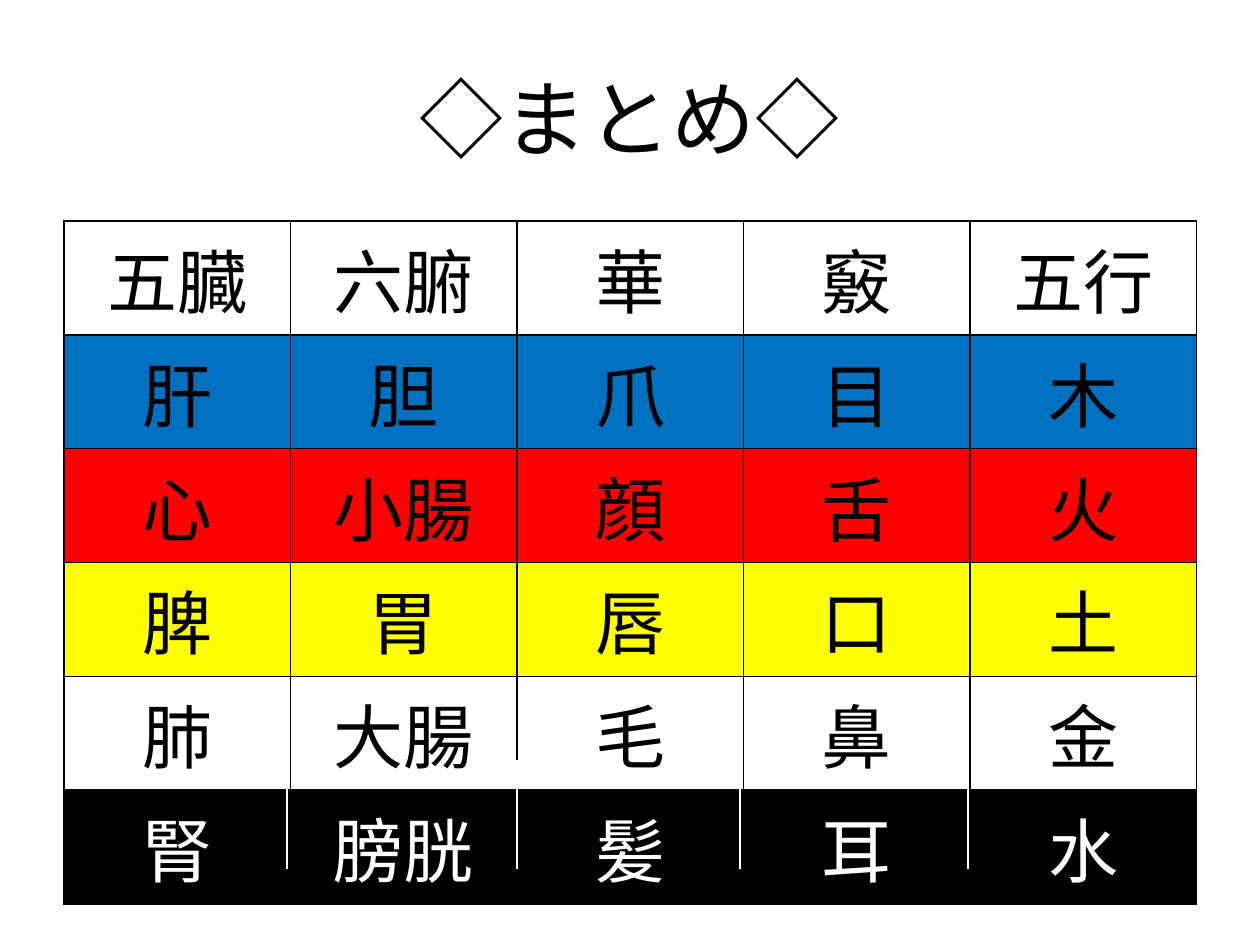
from dataclasses import dataclass

from lxml.etree import SubElement
from pptx import Presentation
from pptx.dml.color import RGBColor
from pptx.enum.text import MSO_ANCHOR, PP_ALIGN
from pptx.oxml.ns import qn
from pptx.util import Pt

EMU_PER_PX = 914400 / 126


def px(length):
    return round(length * EMU_PER_PX)


@dataclass(frozen=True)
class Theme:
    font: str = "Calibri"
    black: str = "000000"
    white: str = "FFFFFF"
    blue: str = "0070C0"
    red: str = "FF0000"
    yellow: str = "FFFF00"
    title_size: int = 48
    cell_size: int = 40
    border_width: float = 1
    divider_width: float = 0.75


class SlideBuilder:
    def __init__(self, presentation, theme):
        self.theme = theme
        self.slide = presentation.slides.add_slide(presentation.slide_layouts[5])

    def format_text(self, frame, text, size, color):
        frame.text = text
        paragraph = frame.paragraphs[0]
        paragraph.alignment = PP_ALIGN.CENTER
        font = paragraph.runs[0].font
        formats = {"name": self.theme.font, "size": Pt(size), "bold": False}
        for attribute, value in formats.items():
            setattr(font, attribute, value)
        font.color.rgb = RGBColor.from_string(color)

    def title(self, text, left, top, width, height):
        heading = self.slide.shapes.title
        place = {"left": left, "top": top, "width": width, "height": height}
        for attribute, value in place.items():
            setattr(heading, attribute, px(value))
        heading.text_frame.vertical_anchor = MSO_ANCHOR.MIDDLE
        self.format_text(heading.text_frame, text, self.theme.title_size, self.theme.black)

    def border(self, cell):
        properties = cell._tc.get_or_add_tcPr()
        for position, side in enumerate(("lnL", "lnR", "lnT", "lnB")):
            line = SubElement(properties, qn(f"a:{side}"), w=str(Pt(self.theme.border_width)))
            properties.insert(position, line)
            fill = SubElement(line, qn("a:solidFill"))
            SubElement(fill, qn("a:srgbClr"), val=self.theme.black)

    def table(self, rows, left, top, width, height):
        columns = len(rows[0][0])
        grid = self.slide.shapes.add_table(
            len(rows), columns, px(left), px(top), px(width), px(height)
        ).table
        for flag in ("first_row", "horz_banding"):
            setattr(grid, flag, False)
        for row_index, (words, fill, color) in enumerate(rows):
            for column_index, word in enumerate(words):
                cell = grid.cell(row_index, column_index)
                self.format_text(cell.text_frame, word, self.theme.cell_size, color)
                if fill:
                    cell.fill.solid()
                    cell.fill.fore_color.rgb = RGBColor.from_string(fill)
                else:
                    cell.fill.background()
                self.border(cell)

    def divider(self, x, top, bottom):
        line = self.slide.shapes.add_connector(1, px(x), px(top), px(x), px(bottom))
        line.line.color.rgb = RGBColor.from_string(self.theme.white)
        line.line.width = Pt(self.theme.divider_width)
        SubElement(line._element.spPr, qn("a:effectLst"))


def main():
    theme = Theme()
    presentation = Presentation()
    presentation.slide_width = px(1260)
    presentation.slide_height = px(945)
    summary = SlideBuilder(presentation, theme)
    summary.title("◇まとめ◇", 63, 38, 1134, 157)

    elements = [
        (("五臓", "六腑", "華", "竅", "五行"), None, theme.black),
        (("肝", "胆", "爪", "目", "木"), theme.blue, theme.black),
        (("心", "小腸", "顔", "舌", "火"), theme.red, theme.black),
        (("脾", "胃", "唇", "口", "土"), theme.yellow, theme.black),
        (("肺", "大腸", "毛", "鼻", "金"), None, theme.black),
        (("腎", "膀胱", "髪", "耳", "水"), theme.black, theme.white),
    ]
    summary.table(elements, 64, 221, 1133, 649)

    for divider_x in (287, 517, 740, 968):
        summary.divider(divider_x, 760, 869)

    presentation.save("out.pptx")


if __name__ == "__main__":
    main()
